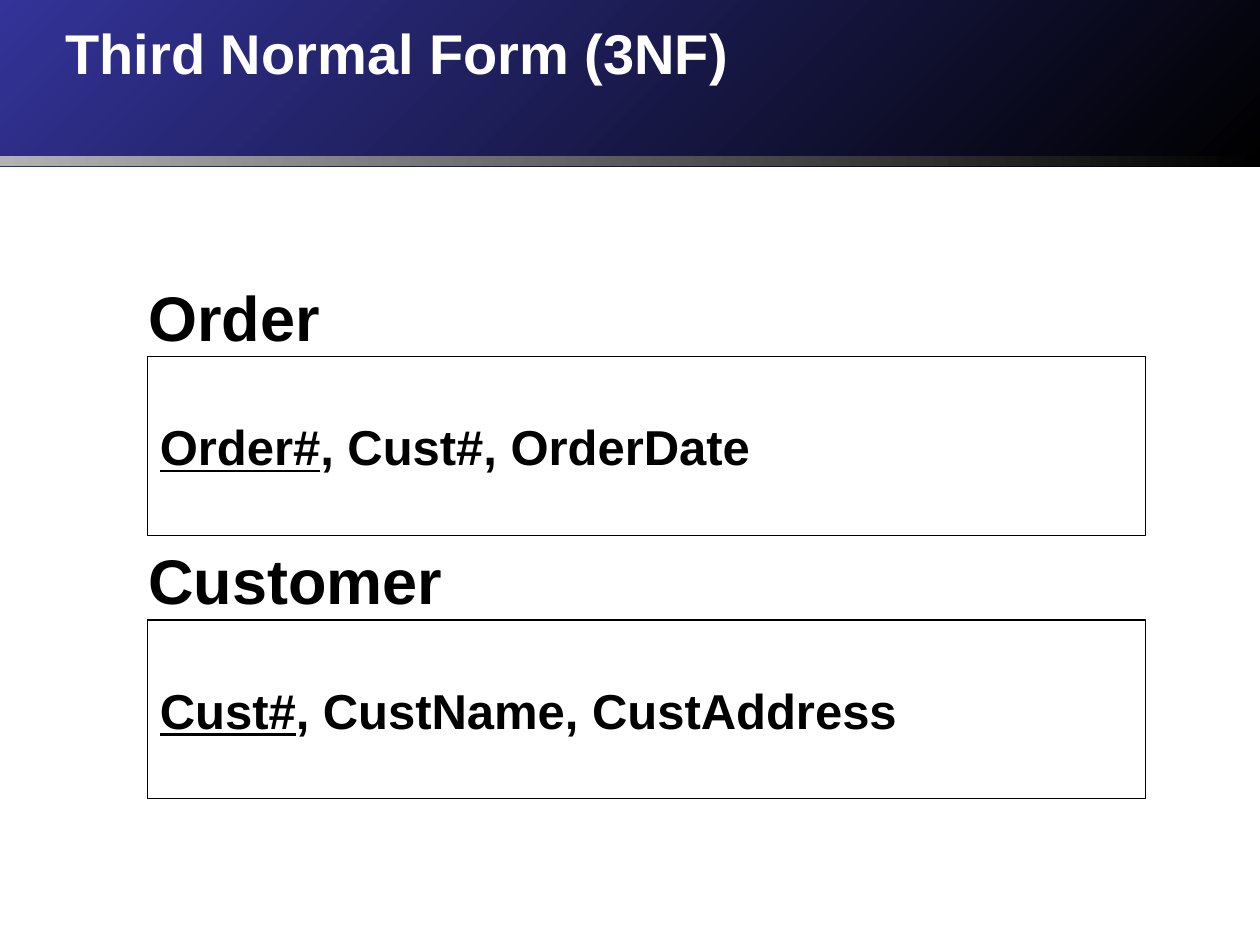
import lxml.etree
import pptx
import pptx.dml.color
import pptx.enum.shapes
import pptx.enum.text
import pptx.oxml.ns
import pptx.util

Inches = pptx.util.Inches
RGBColor = pptx.dml.color.RGBColor
ANCHOR = pptx.enum.text.MSO_ANCHOR
LEFT = pptx.enum.text.PP_ALIGN.LEFT
RECTANGLE = pptx.enum.shapes.MSO_SHAPE.RECTANGLE

BLACK = RGBColor(0x00, 0x00, 0x00)
WHITE = RGBColor(0xFF, 0xFF, 0xFF)
NAVY = RGBColor(0x33, 0x33, 0x99)
GRAY = RGBColor(0xB2, 0xB2, 0xB2)

TITLE_FORMAT = {"name": "Arial", "size": pptx.util.Pt(32), "bold": True}
HEADING_FORMAT = {"name": "Arial", "size": pptx.util.Pt(36), "bold": True}
FIELD_FORMAT = {"name": "Arial", "size": pptx.util.Pt(28), "bold": True}

# Relation name, key, other fields
RELATIONS = [
    ("Order", "Order#", ", Cust#, OrderDate"),
    ("Customer", "Cust#", ", CustName, CustAddress"),
]


def add_run(paragraph, text, formats, color, underline=False):
    run = paragraph.add_run()
    run.text = text
    for name, value in formats.items():
        setattr(run.font, name, value)
    run.font.color.rgb = color
    if underline:
        run.font.underline = True
    return run


def add_text_shadow(run):
    """Give the run a hard black shadow to the lower right."""
    qn = pptx.oxml.ns.qn
    properties = run.font._element
    effects = lxml.etree.Element(qn("a:effectLst"))
    shadow = lxml.etree.SubElement(
        effects, qn("a:outerShdw"), dist=str(Inches(0.04)), dir="2700000")
    lxml.etree.SubElement(shadow, qn("a:srgbClr"), val=str(BLACK))
    properties.find(qn("a:solidFill")).addnext(effects)


def add_gradient_band(slide, left, top, width, height, start, angle):
    band = slide.shapes.add_shape(RECTANGLE, left, top, width, height)
    band.shadow.inherit = False
    band.line.fill.background()
    band.fill.gradient()
    band.fill.gradient_angle = angle
    for stop, color in zip(band.fill.gradient_stops, (start, BLACK)):
        stop.color.rgb = color


def add_header(slide, left, top, width, height, text):
    # Background band with a thin rule along its lower edge
    rule_height = Inches(0.08)
    add_gradient_band(slide, left, top, width, height, NAVY, 315)
    add_gradient_band(slide, left, top + height - rule_height,
                      width, rule_height, GRAY, 0)

    # Title, brought in front of the bands
    title = slide.shapes.title
    slide.shapes._spTree.append(title._element)
    title.left, title.top = left + Inches(0.42), top + Inches(0.1)
    title.width, title.height = Inches(9.08), Inches(1)
    frame = title.text_frame
    frame.word_wrap = True
    frame.auto_size = pptx.enum.text.MSO_AUTO_SIZE.NONE
    frame.vertical_anchor = ANCHOR.TOP
    frame.paragraphs[0].alignment = LEFT
    add_text_shadow(add_run(frame.paragraphs[0], text, TITLE_FORMAT, WHITE))


def add_relation(slide, left, top, width, height, name, key, fields):
    # Field box
    box_top = top + Inches(0.67)
    box = slide.shapes.add_shape(
        RECTANGLE, left, box_top, width, top + height - box_top)
    box.shadow.inherit = False
    box.fill.solid()
    box.fill.fore_color.rgb = WHITE
    box.line.color.rgb = BLACK
    box.line.width = pptx.util.Pt(0.75)
    frame = box.text_frame
    frame.word_wrap = True
    frame.vertical_anchor = ANCHOR.MIDDLE
    paragraph = frame.paragraphs[0]
    paragraph.alignment = LEFT
    add_run(paragraph, key, FIELD_FORMAT, BLACK, underline=True)
    add_run(paragraph, fields, FIELD_FORMAT, BLACK)

    # Relation name above the box
    heading = slide.shapes.add_textbox(
        left - Inches(0.09), top, Inches(2.8), Inches(0.7))
    heading.text_frame.word_wrap = True
    add_run(heading.text_frame.paragraphs[0], name, HEADING_FORMAT, BLACK)


def main():
    presentation = pptx.Presentation()
    presentation.slide_width = Inches(10)
    presentation.slide_height = Inches(7.5)
    slide = presentation.slides.add_slide(presentation.slide_layouts[5])

    add_header(slide, 0, 0, presentation.slide_width, Inches(1.32),
               "Third Normal Form (3NF)")
    height = Inches(2.09)
    for index, relation in enumerate(RELATIONS):
        add_relation(slide, Inches(1.17), Inches(2.16) + index * height,
                     Inches(7.92), height, *relation)

    presentation.save("out.pptx")


if __name__ == "__main__":
    main()
